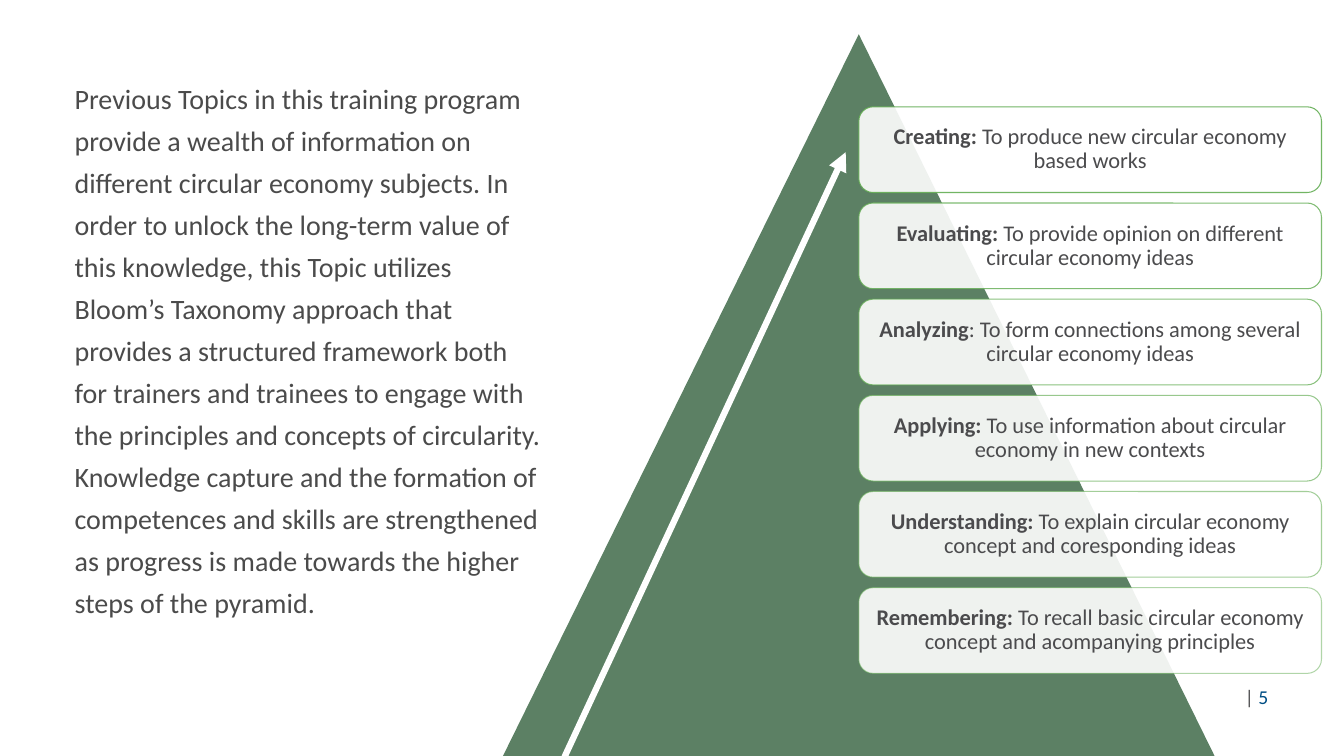
"""Build a slide that shows Bloom's Taxonomy as a circular economy pyramid."""
from dataclasses import dataclass

import lxml.etree
import pptx
import pptx.dml.color
import pptx.enum.shapes
import pptx.enum.text
import pptx.oxml.ns
import pptx.util

Pt = pptx.util.Pt
MSO_SHAPE = pptx.enum.shapes.MSO_SHAPE
MSO_ANCHOR = pptx.enum.text.MSO_ANCHOR
PP_ALIGN = pptx.enum.text.PP_ALIGN


@dataclass(frozen=True)
class Theme:
    font: str = "Calibri"
    text: str = "4B4B4D"
    body_text: str = "4B4B4B"
    number: str = "004E84"
    pyramid: str = "5C8064"
    outline: str = "63AD53"
    white: str = "FFFFFF"
    body_size: int = 20
    level_size: int = 16
    number_size: int = 14


THEME = Theme()

INTRODUCTION = (
    "Previous Topics in this training program provide a wealth of information on "
    "different circular economy subjects. In order to unlock the long-term value of "
    "this knowledge, this Topic utilizes Bloom’s Taxonomy approach that provides a "
    "structured framework both for trainers and trainees to engage with the principles "
    "and concepts of circularity. Knowledge capture and the formation of competences "
    "and skills are strengthened as progress is made towards the higher steps of the "
    "pyramid."
)

LEVELS = [
    ("Creating:", " To produce new circular economy based works"),
    ("Evaluating:", " To provide opinion on different circular economy ideas"),
    ("Analyzing", ": To form connections among several circular economy ideas"),
    ("Applying:", " To use information about circular economy in new contexts"),
    ("Understanding:", " To explain circular economy concept and coresponding ideas"),
    ("Remembering:", " To recall basic circular economy concept and acompanying principles"),
]
LEVEL_TOP = 76.32
LEVEL_STEP = 68.69


def rgb(value):
    return pptx.dml.color.RGBColor.from_string(value)


def apply_format(target, values):
    for name, value in values.items():
        setattr(target, name, value)


def set_opacity(element, percent):
    for color in element.iter(pptx.oxml.ns.qn("a:srgbClr")):
        alpha = lxml.etree.SubElement(color, pptx.oxml.ns.qn("a:alpha"))
        alpha.set("val", str(percent * 1000))


def write_text(shape, runs, size, inset=0, anchor=MSO_ANCHOR.TOP, **paragraph_format):
    frame = shape.text_frame
    margins = ("margin_left", "margin_top", "margin_right", "margin_bottom")
    apply_format(frame, dict.fromkeys(margins, Pt(inset)))
    apply_format(frame, {"word_wrap": True, "vertical_anchor": anchor})
    paragraph = frame.paragraphs[0]
    apply_format(paragraph, paragraph_format)
    for text, color, bold in runs:
        run = paragraph.add_run()
        run.text = text
        apply_format(run.font, {"name": THEME.font, "size": Pt(size), "bold": bold})
        run.font.color.rgb = rgb(color)


def add_text(slide, box, runs, size, **text_format):
    shape = slide.shapes.add_textbox(*map(Pt, box))
    write_text(shape, runs, size, **text_format)


def add_filled_shape(slide, kind, box, color):
    shape = slide.shapes.add_shape(kind, *map(Pt, box))
    shape.shadow.inherit = False
    shape.fill.solid()
    shape.fill.fore_color.rgb = rgb(color)
    shape.line.fill.background()
    return shape


def add_level(slide, index, title, description):
    box = (613.44, LEVEL_TOP + index * LEVEL_STEP, 330.48, 61.2)
    shape = add_filled_shape(slide, MSO_SHAPE.ROUNDED_RECTANGLE, box, THEME.white)
    set_opacity(shape.fill._xPr, 90)
    shape.line.color.rgb = rgb(THEME.outline)
    shape.line.width = Pt(0.75)
    set_opacity(shape.line._get_or_add_ln(), 90 - 8 * index)
    runs = [(title, THEME.text, True), (description, THEME.text, False)]
    write_text(shape, runs, THEME.level_size, inset=5, anchor=MSO_ANCHOR.MIDDLE,
               alignment=PP_ALIGN.CENTER, line_spacing=0.9)


def add_arrow(slide, start, end, color, width):
    arrow = slide.shapes.add_connector(
        pptx.enum.shapes.MSO_CONNECTOR.STRAIGHT, *map(Pt, start + end))
    arrow.line.color.rgb = rgb(color)
    arrow.line.width = Pt(width)
    line = arrow.line._get_or_add_ln()
    lxml.etree.SubElement(line, pptx.oxml.ns.qn("a:tailEnd")).set("type", "triangle")
    lxml.etree.SubElement(arrow._element.spPr, pptx.oxml.ns.qn("a:effectLst"))


def main():
    presentation = pptx.Presentation()
    apply_format(presentation, {"slide_width": Pt(960), "slide_height": Pt(540)})
    slide = presentation.slides.add_slide(presentation.slide_layouts[6])

    add_text(slide, (889.2, 488.88, 48.96, 17.28),
             [("| ", THEME.text, False), ("5", THEME.number, False)],
             THEME.number_size, anchor=MSO_ANCHOR.MIDDLE)
    add_text(slide, (53.28, 52.56, 334.8, 332.64),
             [(INTRODUCTION, THEME.body_text, False)],
             THEME.body_size, line_spacing=1.25)
    add_filled_shape(slide, MSO_SHAPE.ISOSCELES_TRIANGLE,
                     (359.28, 24.48, 508.32, 515.52), THEME.pyramid)
    for index, (title, description) in enumerate(LEVELS):
        add_level(slide, index, title, description)
    add_arrow(slide, (403.2, 540.72), (604.08, 108.72), THEME.white, 4.5)

    presentation.save("out.pptx")


if __name__ == "__main__":
    main()
